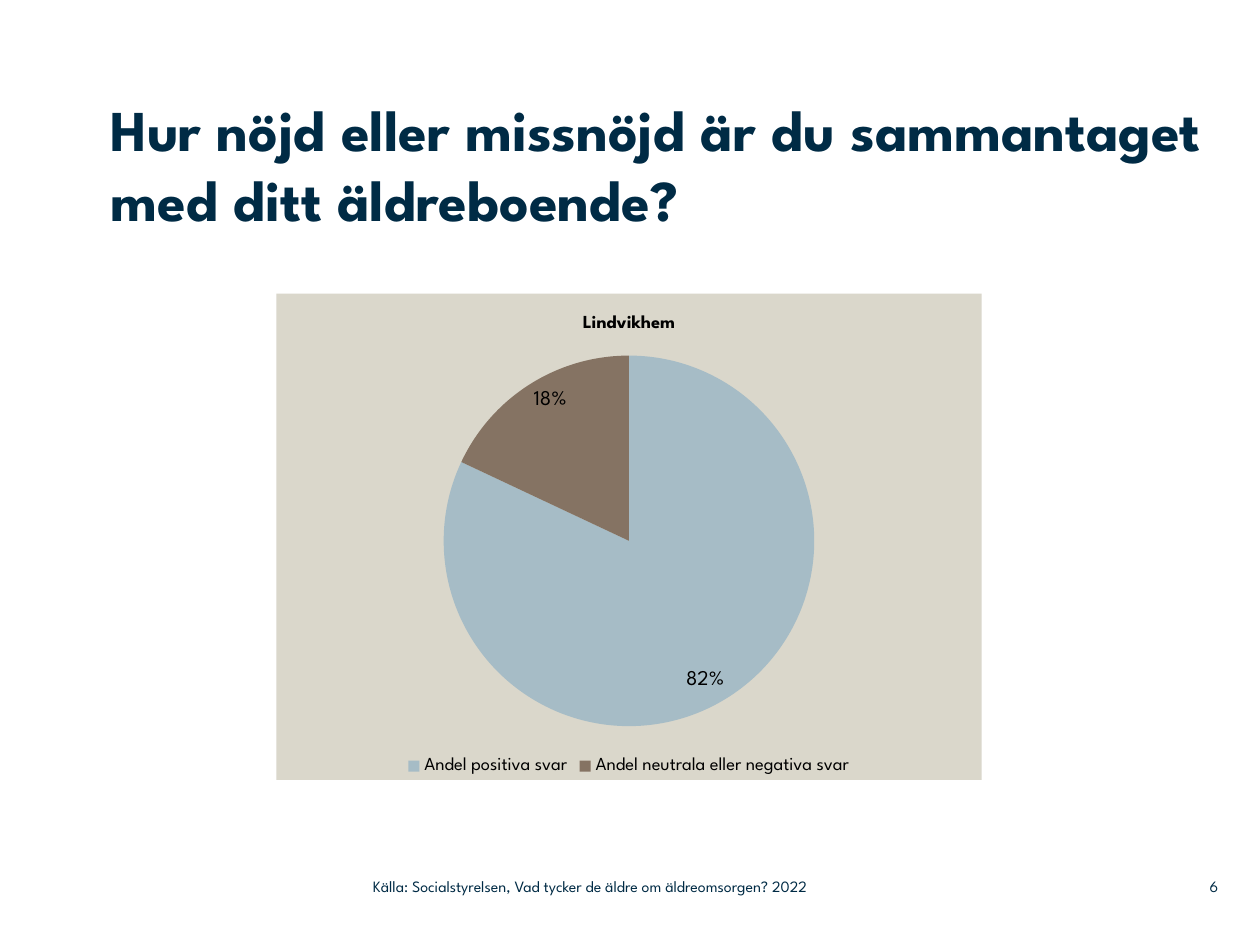
from pptx import Presentation
from pptx.chart.data import CategoryChartData
from pptx.dml.color import RGBColor
from pptx.enum.chart import XL_CHART_TYPE, XL_LABEL_POSITION, XL_LEGEND_POSITION
from pptx.enum.text import MSO_ANCHOR, PP_ALIGN
from pptx.oxml import parse_xml
from pptx.oxml.ns import nsdecls
from pptx.util import Cm, Pt

FONT = "League Spartan"
COLORS = {
    "navy": "002B45",
    "black": "000000",
    "panel": "DAD7CB",
    "positive": "A6BCC6",
    "negative": "857363",
}


def format_font(font, size, color, bold=False):
    font.name = FONT
    font.size = Pt(size)
    font.bold = bold
    font.color.rgb = RGBColor.from_string(COLORS[color])


def format_frame(text_frame, anchor):
    text_frame.word_wrap = True
    text_frame.vertical_anchor = anchor
    text_frame.margin_left = text_frame.margin_right = 0
    text_frame.margin_top = text_frame.margin_bottom = 0


presentation = Presentation()
presentation.slide_width = Cm(25.4)
presentation.slide_height = Cm(19.05)
slide = presentation.slides.add_slide(presentation.slide_layouts[5])

# Title
title = slide.shapes.title
title.left, title.top, title.width, title.height = Cm(2.23), Cm(1.9), Cm(22.43), Cm(3.6)
title.text_frame.text = "Hur nöjd eller missnöjd är du sammantaget med ditt äldreboende?"
format_frame(title.text_frame, MSO_ANCHOR.TOP)
paragraph = title.text_frame.paragraphs[0]
paragraph.alignment = PP_ALIGN.LEFT
format_font(paragraph.runs[0].font, 33, "navy", bold=True)

# Pie chart
chart_data = CategoryChartData()
chart_data.categories = ["Andel positiva svar", "Andel neutrala eller negativa svar"]
chart_data.add_series("Series 1", (82, 18))
chart = slide.shapes.add_chart(
    XL_CHART_TYPE.PIE, Cm(5.57), Cm(5.92), Cm(14.22), Cm(9.8), chart_data
).chart
format_font(chart.font, 18, "black")

# Chart background, without outline
chart.plots[0].vary_by_categories = True
background = parse_xml(
    f'<c:spPr {nsdecls("c", "a")}><a:solidFill><a:srgbClr val="{COLORS["panel"]}"/>'
    "</a:solidFill><a:ln><a:noFill/></a:ln></c:spPr>"
)
chart.element.chart.addnext(background)

# Chart title and legend
chart.has_title = True
chart.chart_title.text_frame.text = "Lindvikhem"
chart.chart_title.include_in_layout = False
format_font(chart.chart_title.text_frame.paragraphs[0].runs[0].font, 10.5, "black", bold=True)
chart.has_legend = True
chart.legend.position = XL_LEGEND_POSITION.BOTTOM
chart.legend.include_in_layout = False
format_font(chart.legend.font, 10.5, "black")

# Slices and percentages
plot = chart.plots[0]
for index, color in enumerate(("positive", "negative")):
    fill = plot.series[0].points[index].format.fill
    fill.solid()
    fill.fore_color.rgb = RGBColor.from_string(COLORS[color])
plot.has_data_labels = True
labels = plot.data_labels
labels.show_percentage = True
labels.show_value = False
labels.number_format = "0%"
labels.number_format_is_linked = False
labels.position = XL_LABEL_POSITION.INSIDE_END
format_font(labels.font, 12, "black")

# Source line and page number
footers = [
    ("Källa: Socialstyrelsen, Vad tycker de äldre om äldreomsorgen? 2022", 7.52, 11.25, PP_ALIGN.LEFT),
    ("6", 23.37, 1.19, PP_ALIGN.RIGHT),
]
for text, left, width, alignment in footers:
    text_frame = slide.shapes.add_textbox(Cm(left), Cm(17.5), Cm(width), Cm(0.74)).text_frame
    text_frame.text = text
    format_frame(text_frame, MSO_ANCHOR.MIDDLE)
    paragraph = text_frame.paragraphs[0]
    paragraph.alignment = alignment
    format_font(paragraph.runs[0].font, 9, "navy")

presentation.save("out.pptx")
